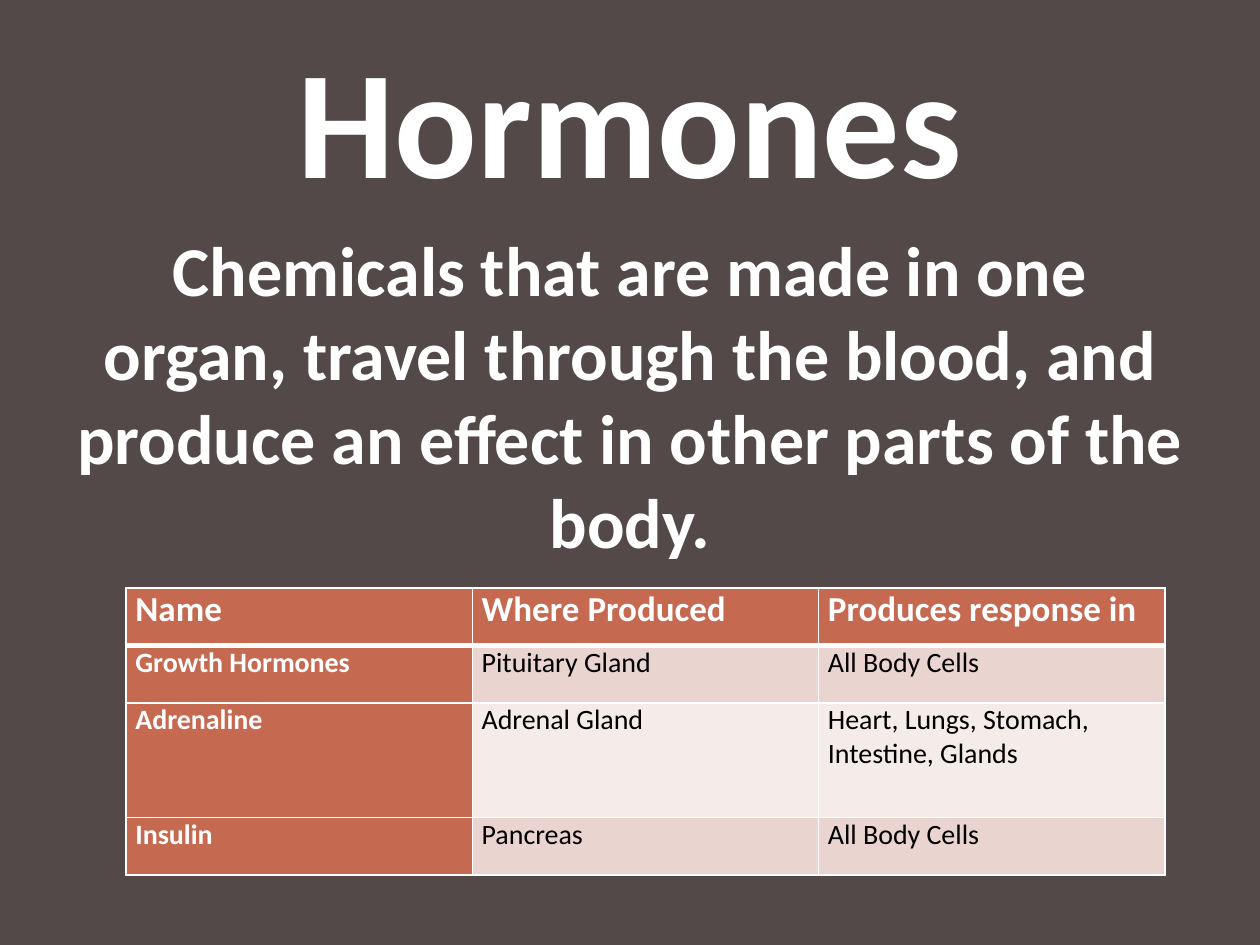
from lxml.etree import SubElement
from pptx import Presentation
from pptx.dml.color import RGBColor
from pptx.enum.text import MSO_ANCHOR as Anchor, PP_ALIGN as Align
from pptx.oxml.ns import qn
from pptx.util import Cm, Pt

WHITE, BLACK, BROWN, RUST = "FFFFFF", "000000", "534949", "C66951"
BANDS = ["EAD4D0", "F5EBE9"]
ROWS = [
    ["Name", "Where Produced", "Produces response in"],
    ["Growth Hormones", "Pituitary Gland", "All Body Cells"],
    ["Adrenaline", "Adrenal Gland", "Heart, Lungs, Stomach, Intestine, Glands"],
    ["Insulin", "Pancreas", "All Body Cells"],
]


def rgb(value):
    return RGBColor.from_string(value)


def assign(obj, values):
    for name, value in values.items():
        setattr(obj, name, value)


class Deck:
    font = "Calibri"

    def __init__(self, width, height):
        self.prs = Presentation()
        assign(self.prs, {"slide_width": Cm(width), "slide_height": Cm(height)})

    def add_slide(self, color):
        self.s = self.prs.slides.add_slide(self.prs.slide_layouts[5])
        fill = self.s.background.fill
        fill.solid()
        fill.fore_color.rgb = rgb(color)

    def put_text(self, tf, text, size, color=WHITE, bold=True, **para):
        p = tf.paragraphs[0]
        assign(p, para)
        r = p.add_run()
        r.text = text
        assign(r.font, {"name": self.font, "size": Pt(size), "bold": bold})
        r.font.color.rgb = rgb(color)

    def title(self, text, size, left, top, width, height):
        sp = self.s.shapes.title
        assign(sp, {"left": Cm(left), "top": Cm(top), "width": Cm(width), "height": Cm(height)})
        assign(sp.text_frame, {"word_wrap": True, "vertical_anchor": Anchor.MIDDLE})
        self.put_text(sp.text_frame, text, size, alignment=Align.CENTER)

    def text(self, text, size, left, top, width, height):
        sp = self.s.shapes.add_textbox(Cm(left), Cm(top), Cm(width), Cm(height))
        sp.text_frame.word_wrap = True
        self.put_text(sp.text_frame, text, size, alignment=Align.CENTER, space_before=Pt(size * 0.2))

    def borders(self, cell, widths):
        tc_pr = cell._tc.get_or_add_tcPr()
        for i, (side, width) in enumerate(widths.items()):
            ln = tc_pr.makeelement(qn(f"a:ln{side}"), {"w": str(Pt(width))})
            SubElement(SubElement(ln, qn("a:solidFill")), qn("a:srgbClr"), val=WHITE)
            tc_pr.insert(i, ln)

    def table(self, rows, left, top, col_width, heights):
        cols = len(rows[0])
        frame = self.s.shapes.add_table(
            len(rows), cols, Cm(left), Cm(top), Cm(col_width * cols), Cm(sum(heights)))
        table = frame.table
        for column in table.columns:
            column.width = Cm(col_width)
        for i, (row, height) in enumerate(zip(rows, heights)):
            table.rows[i].height = Cm(height)
            for j, text in enumerate(row):
                cell = table.cell(i, j)
                heading = i == 0 or j == 0
                assign(cell, {"margin_left": Cm(0.19), "margin_right": Cm(0.19),
                              "margin_top": 0, "margin_bottom": 0})
                cell.fill.solid()
                cell.fill.fore_color.rgb = rgb(RUST if heading else BANDS[(i - 1) % 2])
                self.put_text(cell.text_frame, text, 16 if i else 20,
                              WHITE if heading else BLACK, heading)
                self.borders(cell, {"L": 1, "R": 1, "T": 3 if i == 1 else 1, "B": 1 if i else 3})

    def save(self):
        self.prs.save("out.pptx")


def main():
    deck = Deck(25.4, 19.05)
    deck.add_slide(BROWN)
    deck.title("Hormones", 88, 1.27, 0.76, 22.86, 3.18)
    deck.text("Chemicals that are made in one organ, travel through the blood, "
              "and produce an effect in other parts of the body.",
              40, 1.27, 4.45, 22.86, 6.55)
    deck.table(ROWS, 2.54, 11.85, 6.98, [1.16, 1.16, 2.31, 1.16])
    deck.save()


if __name__ == "__main__":
    main()
